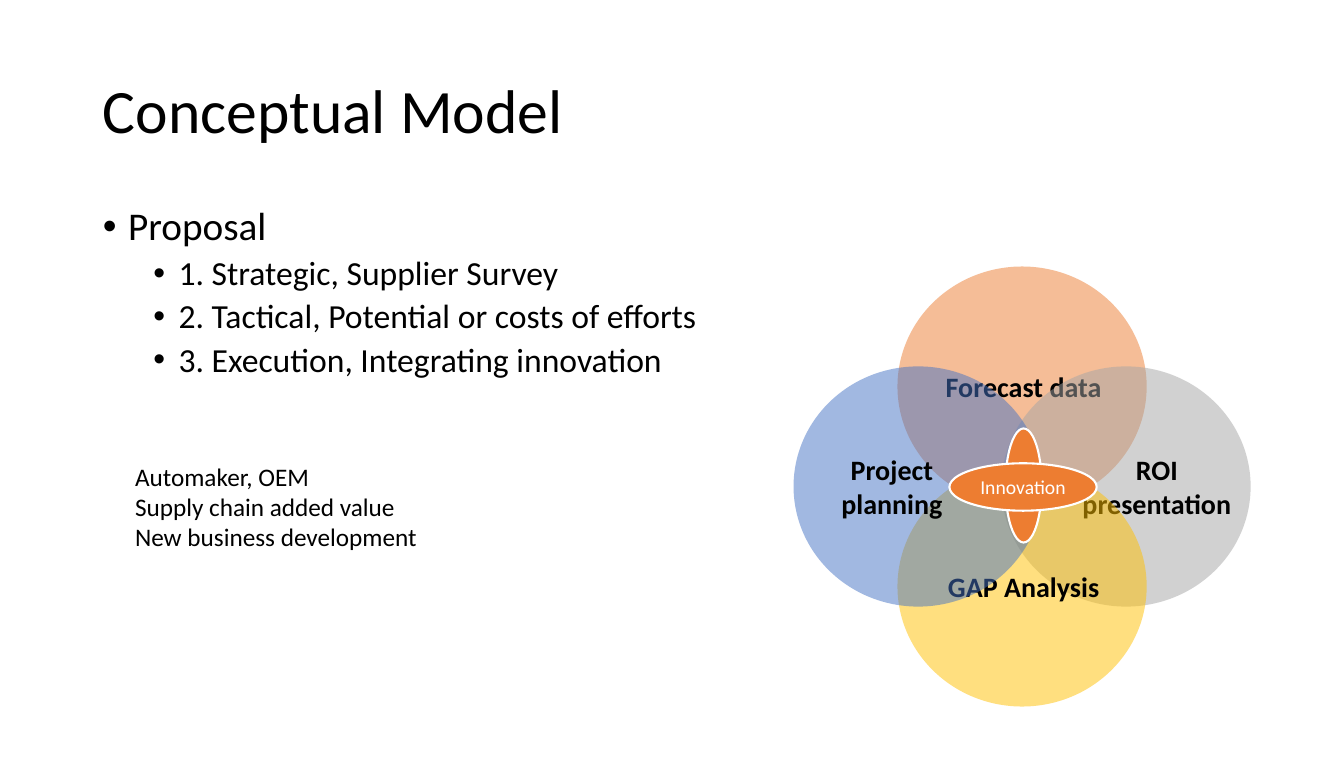
"""Build the Conceptual Model slide: a proposal list beside a four-circle Venn diagram."""
from dataclasses import dataclass
from typing import Optional

import lxml.etree
import pptx
import pptx.dml.color
import pptx.enum.shapes
import pptx.enum.text
import pptx.oxml.ns
import pptx.util

Inches = pptx.util.Inches
Align = pptx.enum.text.PP_ALIGN
Anchor = pptx.enum.text.MSO_ANCHOR


@dataclass(frozen=True)
class Theme:
    font: str = "Calibri"
    ink: str = "000000"
    white: str = "FFFFFF"
    orange: str = "ED7D31"
    gray: str = "A5A5A5"
    gold: str = "FFC000"
    blue: str = "4472C4"
    title: int = 44
    proposal: int = 28
    step: int = 24
    label: int = 20
    note: int = 18
    hub: int = 14


@dataclass(frozen=True)
class Box:
    left: float
    top: float
    width: float
    height: float

    def lengths(self) -> tuple:
        return tuple(Inches(n) for n in (self.left, self.top, self.width, self.height))


@dataclass(frozen=True)
class Circle:
    column: int
    row: int
    color: str
    label: str
    label_box: Box


@dataclass(frozen=True)
class ListItem:
    text: str
    level: int
    size: int
    indent: float
    before: int


THEME = Theme()
CENTER_X, CENTER_Y = 10.13, 4.82
STEP_X, STEP_Y = 1.03, 0.99
CIRCLE_WIDTH, CIRCLE_HEIGHT = 2.47, 2.38
CIRCLES = (
    Circle(0, -1, THEME.orange, "Forecast data", Box(9.27, 3.66, 1.75, 0.33)),
    Circle(1, 0, THEME.gray, "ROI presentation", Box(10.67, 4.43, 1.59, 0.77)),
    Circle(0, 1, THEME.gold, "GAP Analysis", Box(9.27, 5.64, 1.75, 0.33)),
    Circle(-1, 0, THEME.blue, "Project planning", Box(8.24, 4.52, 1.2, 0.59)),
)
STEPS = (
    "1. Strategic, Supplier Survey",
    "2. Tactical, Potential or costs of efforts",
    "3. Execution, Integrating innovation",
)
ITEMS = (
    ListItem("Proposal", 0, THEME.proposal, 0.25, 10),
    *(ListItem(step, 1, THEME.step, 0.75, 5) for step in STEPS),
)
NOTES = "Automaker, OEM\nSupply chain added value\nNew business development"


def rgb(color: str) -> pptx.dml.color.RGBColor:
    return pptx.dml.color.RGBColor.from_string(color)


def style_runs(para, size: int, color: str = THEME.ink, bold: bool = False) -> None:
    for run in para.runs:
        run.font.name = THEME.font
        run.font.size = pptx.util.Pt(size)
        run.font.bold = bold
        run.font.color.rgb = rgb(color)


def place(shape, box: Box) -> None:
    shape.left, shape.top, shape.width, shape.height = box.lengths()


def center_text(shape, text: str, size: int, color: str = THEME.ink, bold: bool = False) -> None:
    frame = shape.text_frame
    frame.text = text
    frame.word_wrap = True
    frame.vertical_anchor = Anchor.MIDDLE
    frame.margin_left = frame.margin_right = Inches(0.05)
    frame.margin_top = frame.margin_bottom = Inches(0.05)
    frame.paragraphs[0].alignment = Align.CENTER
    style_runs(frame.paragraphs[0], size, color, bold)


def add_ellipse(slide, box: Box, color: str, alpha: Optional[int] = None, outlined: bool = False):
    shape = slide.shapes.add_shape(pptx.enum.shapes.MSO_SHAPE.OVAL, *box.lengths())
    shape.shadow.inherit = False
    shape.fill.solid()
    shape.fill.fore_color.rgb = rgb(color)
    if alpha is not None:
        tint = shape.fill._xPr.find(".//" + pptx.oxml.ns.qn("a:srgbClr"))
        lxml.etree.SubElement(tint, pptx.oxml.ns.qn("a:alpha"), val=str(alpha * 1000))
    if outlined:
        shape.line.color.rgb = rgb(THEME.white)
        shape.line.width = pptx.util.Pt(1.5)
    else:
        shape.line.fill.background()
    return shape


def add_title(slide) -> None:
    title = slide.shapes.title
    place(title, Box(0.92, 0.4, 11.49, 1.45))
    title.text_frame.text = "Conceptual Model"
    title.text_frame.vertical_anchor = Anchor.MIDDLE
    para = title.text_frame.paragraphs[0]
    para.alignment = Align.LEFT
    para.line_spacing = 0.9
    style_runs(para, THEME.title)


def add_proposal(slide) -> None:
    body = slide.placeholders[1]
    place(body, Box(0.92, 2, 11.49, 4.76))
    frame = body.text_frame
    frame.text = "\n".join(item.text for item in ITEMS)
    frame.auto_size = pptx.enum.text.MSO_AUTO_SIZE.NONE
    for para, item in zip(frame.paragraphs, ITEMS):
        para.level = item.level
        para.line_spacing = 0.9
        para.space_before = pptx.util.Pt(item.before)
        style_runs(para, item.size)
        properties = para._p.get_or_add_pPr()
        properties.set("marL", str(Inches(item.indent)))
        properties.set("indent", str(Inches(-0.25)))
        lxml.etree.SubElement(properties, pptx.oxml.ns.qn("a:buFont"), typeface="Arial")
        lxml.etree.SubElement(properties, pptx.oxml.ns.qn("a:buChar"), char="•")


def add_venn(slide) -> None:
    for circle in CIRCLES:
        left = CENTER_X + circle.column * STEP_X - CIRCLE_WIDTH / 2
        top = CENTER_Y + circle.row * STEP_Y - CIRCLE_HEIGHT / 2
        add_ellipse(slide, Box(left, top, CIRCLE_WIDTH, CIRCLE_HEIGHT), circle.color, alpha=50)
        label = slide.shapes.add_textbox(*circle.label_box.lengths())
        center_text(label, circle.label, THEME.label, bold=True)
    upright = add_ellipse(slide, Box(9.58, 4.63, 1.13, 0.36), THEME.orange, outlined=True)
    upright.rotation = 270
    hub = add_ellipse(slide, Box(9.41, 4.59, 1.46, 0.47), THEME.orange, outlined=True)
    center_text(hub, "Innovation", THEME.hub, THEME.white)


def add_notes_box(slide) -> None:
    box = slide.shapes.add_textbox(*Box(1.24, 4.52, 4.08, 1.01).lengths())
    box.text_frame.word_wrap = True
    box.text_frame.text = NOTES
    for para in box.text_frame.paragraphs:
        style_runs(para, THEME.note)


def main() -> None:
    deck = pptx.Presentation()
    deck.slide_width, deck.slide_height = Inches(13.32), Inches(7.5)
    slide = deck.slides.add_slide(deck.slide_layouts[1])
    add_title(slide)
    add_proposal(slide)
    add_venn(slide)
    add_notes_box(slide)
    deck.save("out.pptx")


if __name__ == "__main__":
    main()
